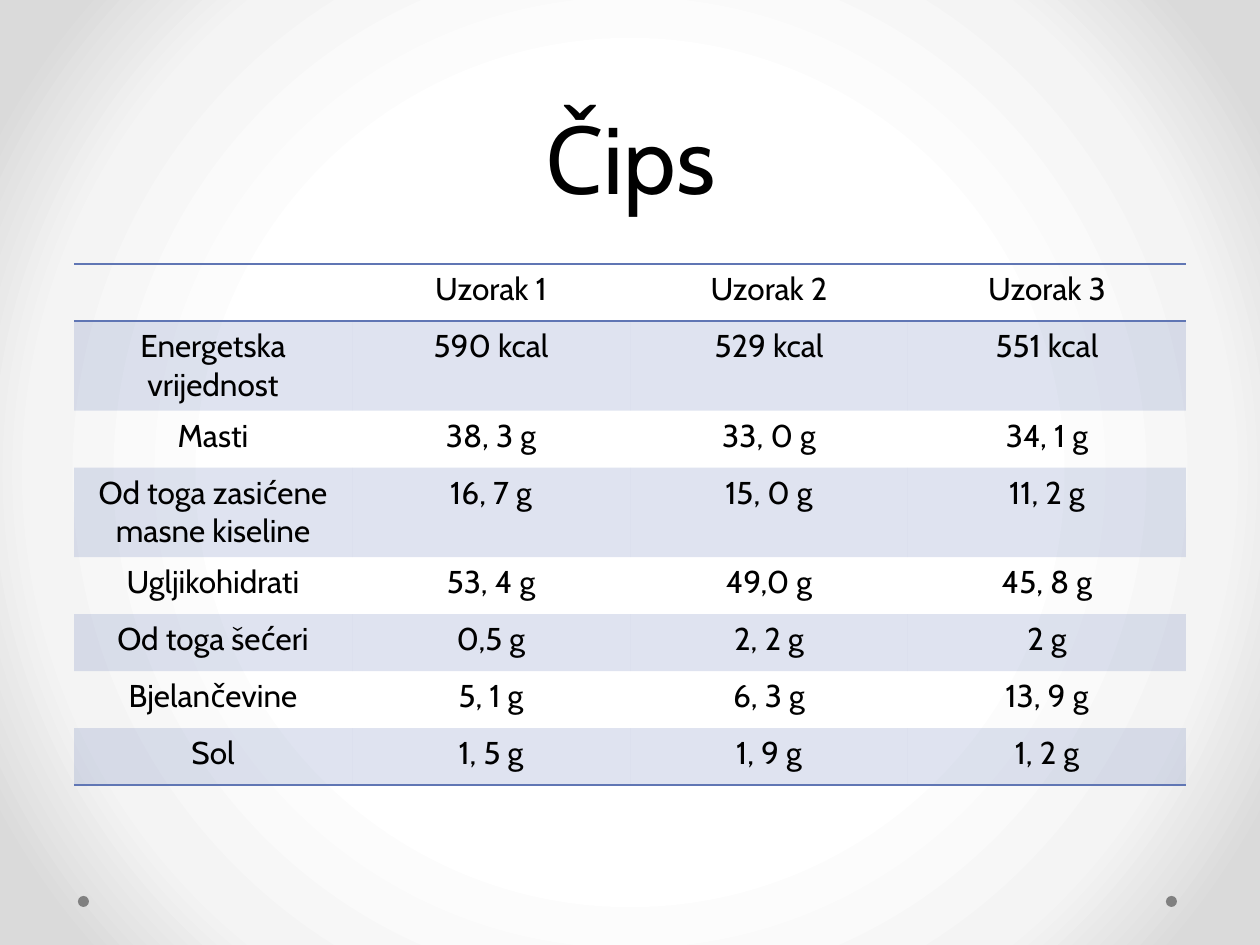
"""Build the slide comparing the nutrition values of three crisps samples."""
from dataclasses import dataclass

from lxml.etree import SubElement
from pptx import Presentation
from pptx.dml.color import RGBColor
from pptx.enum.shapes import MSO_SHAPE
from pptx.enum.text import MSO_ANCHOR, MSO_AUTO_SIZE, PP_ALIGN
from pptx.oxml.ns import qn
from pptx.util import Pt

TITLE = "Čips"
HEADER = ("", "Uzorak 1", "Uzorak 2", "Uzorak 3")
NUTRITION = [
    ("Energetska vrijednost", "590 kcal", "529 kcal", "551 kcal"),
    ("Masti", "38, 3 g", "33, 0 g", "34, 1 g"),
    ("Od toga zasićene masne kiseline", "16, 7 g", "15, 0 g", "11, 2 g"),
    ("Ugljikohidrati", "53, 4 g", "49,0 g", "45, 8 g"),
    ("Od toga šećeri", "0,5 g", "2, 2 g", "2 g"),
    ("Bjelančevine", "5, 1 g", "6, 3 g", "13, 9 g"),
    ("Sol", "1, 5 g", "1, 9 g", "1, 2 g"),
]
ROWS = [HEADER, *NUTRITION]
TWO_LINE_ROWS = (1, 3)

SLIDE_SIZE = (1260, 945)
TITLE_BOX = (63, 0, 1134, 220)
TABLE_LEFT, TABLE_TOP = 74, 264
COLUMN_WIDTH, ROW_HEIGHT, TALL_ROW_HEIGHT = 278, 57, 89
DOT_LEFTS, DOT_TOP, DOT_SIZE = (78, 1166), 896, 11
NO_TABLE_STYLE = "{2D5ABB26-0587-4C30-8999-92F81FD0307C}"


@dataclass(frozen=True)
class Theme:
    """Colours, font and type sizes of the slide."""
    font: str = "Cabin"
    text: str = "000000"
    accent: str = "6076B4"
    dot: str = "808080"
    band_opacity: int = 20
    title_size: int = 54
    title_spacing: int = 58
    table_size: int = 18
    rule_width: int = 1
    background: tuple = ((50, "FFFFFF"), (76, "F4F4F4"), (92, "DADADA"))


THEME = Theme()


def px(length):
    return round(length * 914400 / 126)


def add_child(parent, tag, **attributes):
    return SubElement(parent, qn(tag), {name: str(value) for name, value in attributes.items()})


def write(paragraph, text, size):
    paragraph.alignment = PP_ALIGN.CENTER
    run = paragraph.add_run()
    run.text = text
    run.font.name = THEME.font
    run.font.size = Pt(size)
    run.font.color.rgb = RGBColor.from_string(THEME.text)


def paint_background(slide):
    fill = slide.background.fill
    fill.gradient()
    gradient = next(slide.element.iter(qn("a:gradFill")))
    for child in list(gradient):
        gradient.remove(child)
    stops = add_child(gradient, "a:gsLst")
    for position, color in THEME.background:
        stop = add_child(stops, "a:gs", pos=position * 1000)
        add_child(stop, "a:srgbClr", val=color)
    circle = add_child(gradient, "a:path", path="circle")
    add_child(circle, "a:fillToRect", l=50000, t=50000, r=50000, b=50000)


def add_dots(slide):
    for left in DOT_LEFTS:
        dot = slide.shapes.add_shape(
            MSO_SHAPE.OVAL, px(left), px(DOT_TOP), px(DOT_SIZE), px(DOT_SIZE))
        dot.shadow.inherit = False
        dot.fill.solid()
        dot.fill.fore_color.rgb = RGBColor.from_string(THEME.dot)
        dot.line.fill.background()


def fill_title(slide):
    title = slide.shapes.title
    title.left, title.top, title.width, title.height = map(px, TITLE_BOX)
    frame = title.text_frame
    frame.auto_size = MSO_AUTO_SIZE.NONE
    frame.vertical_anchor = MSO_ANCHOR.BOTTOM
    paragraph = frame.paragraphs[0]
    paragraph.line_spacing = Pt(THEME.title_spacing)
    write(paragraph, TITLE, THEME.title_size)


def add_rule(cell, tag):
    properties = cell._tc.get_or_add_tcPr()
    rule = add_child(properties, tag, w=Pt(THEME.rule_width))
    add_child(add_child(rule, "a:solidFill"), "a:srgbClr", val=THEME.accent)


def format_cell(cell, row_index):
    if row_index == 0:
        add_rule(cell, "a:lnT")
    if row_index in (0, len(ROWS) - 1):
        add_rule(cell, "a:lnB")
    if row_index % 2:
        cell.fill.solid()
        cell.fill.fore_color.rgb = RGBColor.from_string(THEME.accent)
        color = cell._tc.tcPr.find(qn("a:solidFill")).find(qn("a:srgbClr"))
        add_child(color, "a:alpha", val=THEME.band_opacity * 1000)
    else:
        cell.fill.background()


def add_nutrition_table(slide):
    heights = [TALL_ROW_HEIGHT if index in TWO_LINE_ROWS else ROW_HEIGHT
               for index in range(len(ROWS))]
    frame = slide.shapes.add_table(
        len(ROWS), len(HEADER), px(TABLE_LEFT), px(TABLE_TOP),
        px(COLUMN_WIDTH * len(HEADER)), px(sum(heights)))
    table = frame.table
    next(frame.element.iter(qn("a:tableStyleId"))).text = NO_TABLE_STYLE
    for column in table.columns:
        column.width = px(COLUMN_WIDTH)
    for row_index, (values, height) in enumerate(zip(ROWS, heights)):
        table.rows[row_index].height = px(height)
        for column_index, value in enumerate(values):
            cell = table.cell(row_index, column_index)
            format_cell(cell, row_index)
            if value:
                write(cell.text_frame.paragraphs[0], value, THEME.table_size)


def main():
    presentation = Presentation()
    presentation.slide_width, presentation.slide_height = map(px, SLIDE_SIZE)
    slide = presentation.slides.add_slide(presentation.slide_layouts.get_by_name("Title Only"))
    paint_background(slide)
    add_dots(slide)
    fill_title(slide)
    add_nutrition_table(slide)
    presentation.save("out.pptx")


if __name__ == "__main__":
    main()
